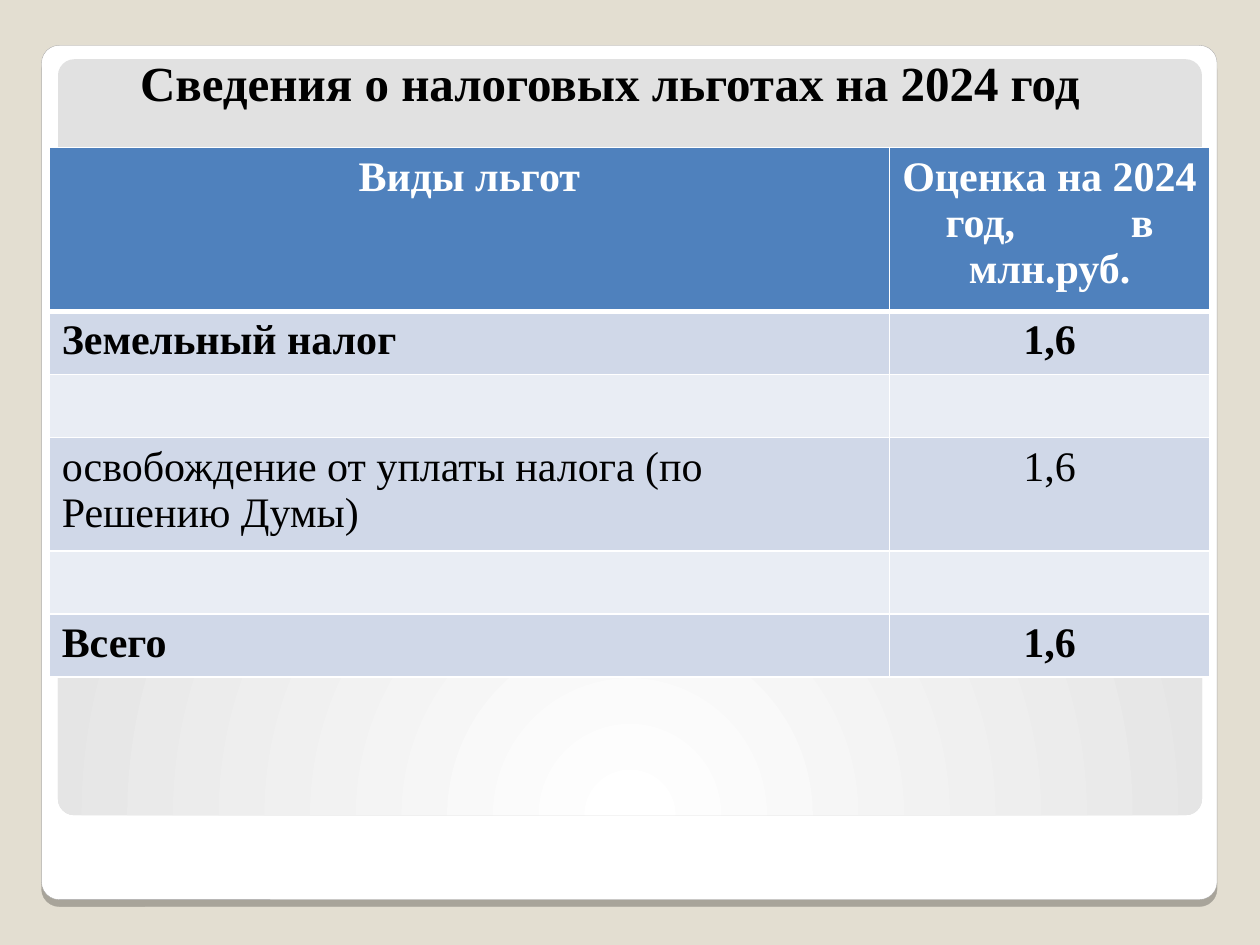
from lxml import etree
from pptx import Presentation
from pptx import util as u
from pptx.dml.color import RGBColor
from pptx.enum import shapes, text
from pptx.oxml import parse_xml
from pptx.oxml.ns import nsdecls, qn

BEIGE = RGBColor(0xE3, 0xDE, 0xD1)
WHITE = RGBColor(0xFF, 0xFF, 0xFF)
BLACK = RGBColor(0x00, 0x00, 0x00)
EDGE = RGBColor(0xA4, 0xA3, 0xA3)
GREY = RGBColor(0xE1, 0xE1, 0xE1)
BLUE = RGBColor(0x4F, 0x81, 0xBD)
BAND = RGBColor(0xD0, 0xD8, 0xE8)
PALE = RGBColor(0xE9, 0xED, 0xF4)

FONT = "Times New Roman"
COLUMNS = (6.67, 2.54)
ROWS = (
    (1.3, True, "Виды льгот", "Оценка на 2024 год,\tв млн.руб."),
    (0.5, True, "Земельный налог", "1,6"),
    (0.5, False, "", ""),
    (0.9, False, "освобождение от уплаты налога (по Решению Думы)", "1,6"),
    (0.5, False, "", ""),
    (0.5, True, "Всего", "1,6"),
)


def inches(box):
    return [u.Inches(length) for length in box]


def write(frame, words, size=24, bold=False, color=BLACK, align=text.PP_ALIGN.LEFT):
    frame.word_wrap = True
    para = frame.paragraphs[0]
    para.alignment = align
    span = para.add_run()
    span.text = words
    span.font.name = FONT
    span.font.size = u.Pt(size)
    span.font.bold = bold
    span.font.color.rgb = color
    return para


def add_panel(page, box, radius):
    panel = page.shapes.add_shape(shapes.MSO_SHAPE.ROUNDED_RECTANGLE, *inches(box))
    panel.adjustments[0] = radius / min(box[2:])
    panel.shadow.inherit = False
    panel.fill.solid()
    panel.fill.fore_color.rgb = WHITE
    panel.line.fill.background()
    return panel


def add_card(page, box):
    card = add_panel(page, box, 0.14)
    card.line.color.rgb = EDGE
    card.line.width = u.Pt(0.16)
    effects = card._element.spPr.find(qn("a:effectLst"))
    effects.append(parse_xml(
        f'<a:outerShdw {nsdecls("a")} blurRad="0" dist="{u.Pt(4)}" dir="5400000" rotWithShape="0">'
        '<a:srgbClr val="000000"><a:alpha val="25000"/></a:srgbClr></a:outerShdw>'))


def add_glow(page, box):
    glow = add_panel(page, box, 0.13)
    properties = glow._element.spPr
    gradient = parse_xml(
        f'<a:gradFill {nsdecls("a")} rotWithShape="1"><a:gsLst>'
        f'<a:gs pos="0"><a:srgbClr val="{WHITE}"/></a:gs>'
        f'<a:gs pos="100000"><a:srgbClr val="{GREY}"/></a:gs></a:gsLst>'
        '<a:path path="circle"><a:fillToRect l="50000" t="175000" r="50000" b="-75000"/>'
        '</a:path></a:gradFill>')
    properties.replace(properties.find(qn("a:solidFill")), gradient)


def add_title(page, box, words):
    frame = page.shapes.add_textbox(*inches(box)).text_frame
    frame.vertical_anchor = text.MSO_ANCHOR.BOTTOM
    write(frame, words, size=28, bold=True, align=text.PP_ALIGN.CENTER)


def add_borders(cell, bottom):
    properties = cell._tc.get_or_add_tcPr()
    for side, width in (("lnL", 1), ("lnR", 1), ("lnT", 1), ("lnB", bottom)):
        line = etree.SubElement(properties, qn(f"a:{side}"), w=str(u.Pt(width)))
        fill = etree.SubElement(line, qn("a:solidFill"))
        etree.SubElement(fill, qn("a:srgbClr"), val=str(WHITE))


def add_tab_stop(para, position):
    stops = etree.SubElement(para._p.get_or_add_pPr(), qn("a:tabLst"))
    etree.SubElement(stops, qn("a:tab"), pos=str(u.Inches(position)), algn="l")


def add_benefits(page, box):
    table = page.shapes.add_table(len(ROWS), len(COLUMNS), *inches(box)).table
    for column, width in zip(table.columns, COLUMNS):
        column.width = u.Inches(width)
    for row, (height, bold, *values) in enumerate(ROWS):
        header = row == 0
        table.rows[row].height = u.Inches(height)
        for column, words in enumerate(values):
            cell = table.cell(row, column)
            add_borders(cell, 3 if header else 1)
            cell.fill.solid()
            cell.fill.fore_color.rgb = BLUE if header else BAND if row % 2 else PALE
            if not words:
                continue
            centred = header or column == 1
            para = write(cell.text_frame, words, bold=bold,
                         color=WHITE if header else BLACK,
                         align=text.PP_ALIGN.CENTER if centred else text.PP_ALIGN.LEFT)
            if "\t" in words:
                add_tab_stop(para, 1.47)


def main():
    deck = Presentation()
    deck.slide_width, deck.slide_height = u.Inches(10), u.Inches(7.5)
    page = deck.slides.add_slide(deck.slide_layouts[6])
    page.background.fill.solid()
    page.background.fill.fore_color.rgb = BEIGE
    add_card(page, (0.33, 0.36, 9.33, 6.78))
    add_glow(page, (0.46, 0.47, 9.08, 6))
    add_title(page, (0.62, 0.31, 8.44, 0.62), "Сведения о налоговых льготах на 2024 год")
    add_benefits(page, (0.39, 1.17, sum(COLUMNS), 4.2))
    deck.save("out.pptx")


if __name__ == "__main__":
    main()
